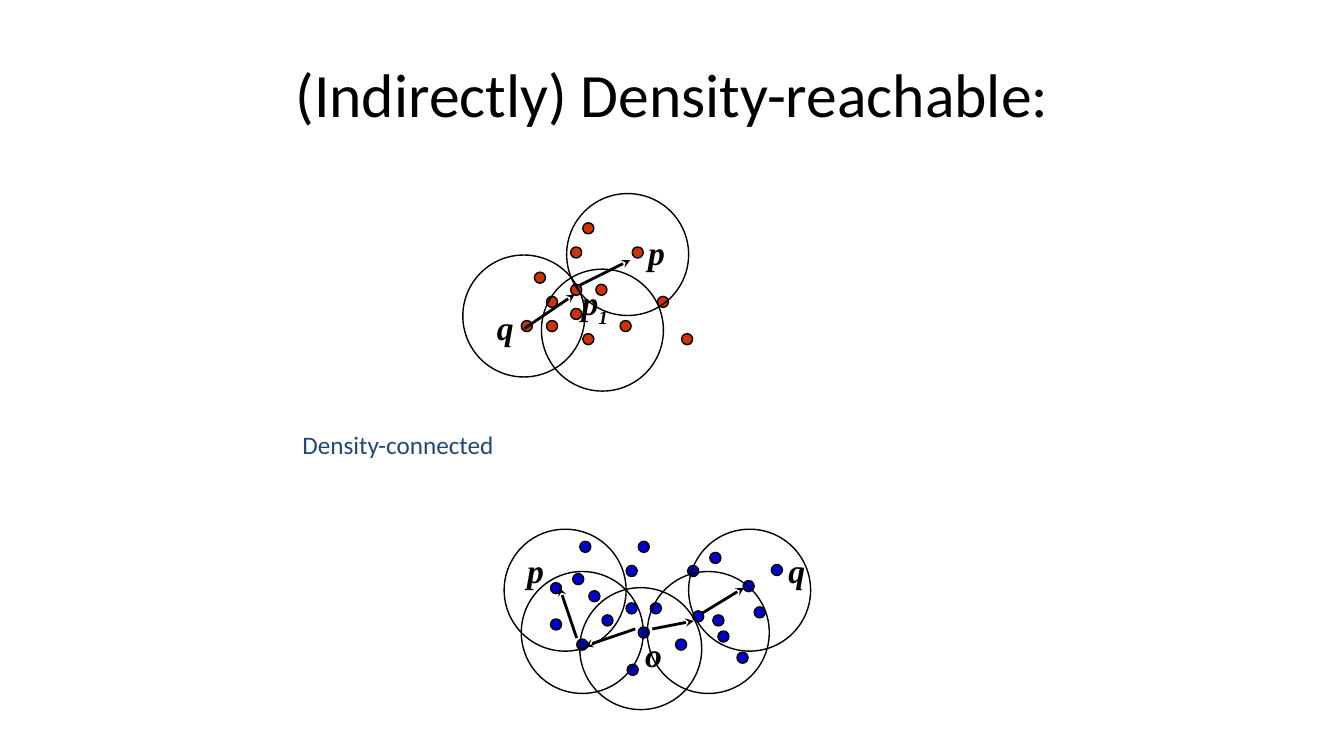
from dataclasses import dataclass

from lxml import etree
from pptx import Presentation
from pptx.dml.color import RGBColor
from pptx.enum.shapes import MSO_CONNECTOR, MSO_SHAPE
from pptx.enum.text import MSO_ANCHOR, MSO_AUTO_SIZE, PP_ALIGN
from pptx.oxml.ns import qn
from pptx.util import Inches, Pt

OVAL = MSO_SHAPE.OVAL
LINE = MSO_CONNECTOR.STRAIGHT
TOP, MIDDLE = MSO_ANCHOR.TOP, MSO_ANCHOR.MIDDLE
LEFT, CENTER = PP_ALIGN.LEFT, PP_ALIGN.CENTER
GROW, FIXED = MSO_AUTO_SIZE.SHAPE_TO_FIT_TEXT, MSO_AUTO_SIZE.NONE

BLACK, NAVY, RED, BLUE = "000000", "1F497D", "CC3300", "0000CC"
DOT, RING = 0.11, 1.21
BODY = {"name": "Calibri"}
MATH = {"name": "Times New Roman", "size": Pt(24), "bold": True, "italic": True}

Point = tuple[float, float]


@dataclass
class Label:
    text: str
    left: float
    top: float
    width: float = 0.42
    sub: str = ""


@dataclass
class Arrow:
    start: Point
    end: Point


@dataclass
class Cluster:
    color: str
    dots: list[Point]
    rings: list[Point]
    labels: list[Label]
    arrows: list[Arrow]


REACH = Cluster(
    RED,
    [(5.3, 2.7), (5.66, 2.82), (5.66, 2.45), (5.17, 3.18), (5.42, 2.94),
     (5.42, 3.18), (5.78, 3.31), (5.78, 2.21), (6.52, 2.94), (6.27, 2.45),
     (5.66, 3.06), (5.91, 2.82), (6.15, 3.18), (6.76, 3.31)],
    [(5.37, 2.67), (4.59, 2.53), (5.62, 1.92)],
    [Label("p", 6.33, 2.25), Label("q", 4.83, 3),
     Label("p", 5.67, 2.75, 0.67, "1")],
    [Arrow((5.75, 2.83), (6.25, 2.58)), Arrow((5.2, 3.26), (5.7, 2.92))],
)

LINKED = Cluster(
    BLUE,
    [(5.84, 5.86), (6.21, 5.98), (6.21, 5.61), (5.72, 6.34), (5.97, 6.1),
     (6.22, 6.59), (6.33, 6.22), (6.33, 5.37), (7.07, 6.1), (6.82, 5.61),
     (5.46, 6.14), (6.45, 5.98), (6.7, 6.34), (7.31, 6.47), (7.48, 6.02),
     (6.87, 6.06), (7.12, 6.26), (7.65, 5.6), (7.04, 5.48), (7.37, 5.76),
     (5.68, 5.69), (5.46, 5.78), (5.75, 5.37)],
    [(5.17, 5.67), (5.75, 5.83), (6.42, 5.67), (6.83, 5.25), (5, 5.25)],
    [Label("p", 5.13, 5.41), Label("q", 7.72, 5.41), Label("o", 6.3, 6.24)],
    [Arrow((6.3, 6.24), (5.8, 6.41)), Arrow((6.47, 6.24), (6.88, 6.16)),
     Arrow((5.72, 6.33), (5.55, 5.83)), Arrow((6.97, 6.08), (7.38, 5.83))],
)


def paint(color: str) -> RGBColor:
    return RGBColor.from_string(color)


def style(run, form: dict, color: str) -> None:
    for key, value in form.items():
        setattr(run.font, key, value)
    run.font.color.rgb = paint(color)


def write(slide, box: tuple, text: str, form: dict, color: str = BLACK,
          wrap: bool = True, anchor=TOP, align=LEFT, fit=GROW):
    frame = slide.shapes.add_textbox(*map(Inches, box)).text_frame
    for key, value in {"word_wrap": wrap, "auto_size": fit,
                       "vertical_anchor": anchor}.items():
        setattr(frame, key, value)
    para = frame.paragraphs[0]
    para.alignment = align
    run = para.add_run()
    run.text = text
    style(run, form, color)
    return para


def circle(slide, place: Point, size: float, fill: str = "") -> None:
    shape = slide.shapes.add_shape(OVAL, *map(Inches, (*place, size, size)))
    shape.shadow.inherit = False
    if fill:
        shape.fill.solid()
        shape.fill.fore_color.rgb = paint(fill)
    else:
        shape.fill.background()
    shape.line.color.rgb = paint(BLACK)
    shape.line.width = Pt(1)


def name(slide, label: Label) -> None:
    box = (label.left, label.top, label.width, 0.51)
    para = write(slide, box, label.text, MATH)
    if label.sub:
        run = para.add_run()
        run.text = label.sub
        style(run, MATH, BLACK)
        run.font._element.set("baseline", "-25000")


def point(slide, arrow: Arrow) -> None:
    ends = map(Inches, (*arrow.start, *arrow.end))
    link = slide.shapes.add_connector(LINE, *ends)
    link.line.color.rgb = paint(BLACK)
    link.line.width = Pt(2)
    tip = etree.SubElement(link.line._get_or_add_ln(), qn("a:tailEnd"))
    tip.set("type", "stealth")
    etree.SubElement(link._element.spPr, qn("a:effectLst"))


def draw(slide, group: Cluster) -> None:
    for dot in group.dots:
        circle(slide, dot, DOT, group.color)
    for ring in group.rings:
        circle(slide, ring, RING)
    for label in group.labels:
        name(slide, label)
    for arrow in group.arrows:
        point(slide, arrow)


def main() -> None:
    deck = Presentation()
    deck.slide_width, deck.slide_height = Inches(13.33), Inches(7.5)
    slide = deck.slides.add_slide(deck.slide_layouts[6])
    write(slide, (0.67, 0.3, 12, 1.25), "(Indirectly) Density-reachable:",
          BODY | {"size": Pt(44)}, anchor=MIDDLE, align=CENTER, fit=FIXED)
    for group in (REACH, LINKED):
        draw(slide, group)
    write(slide, (2.9, 4.21, 2.13, 0.4), "Density-connected",
          BODY | {"size": Pt(18)}, NAVY, wrap=False)
    deck.save("out.pptx")


if __name__ == "__main__":
    main()
